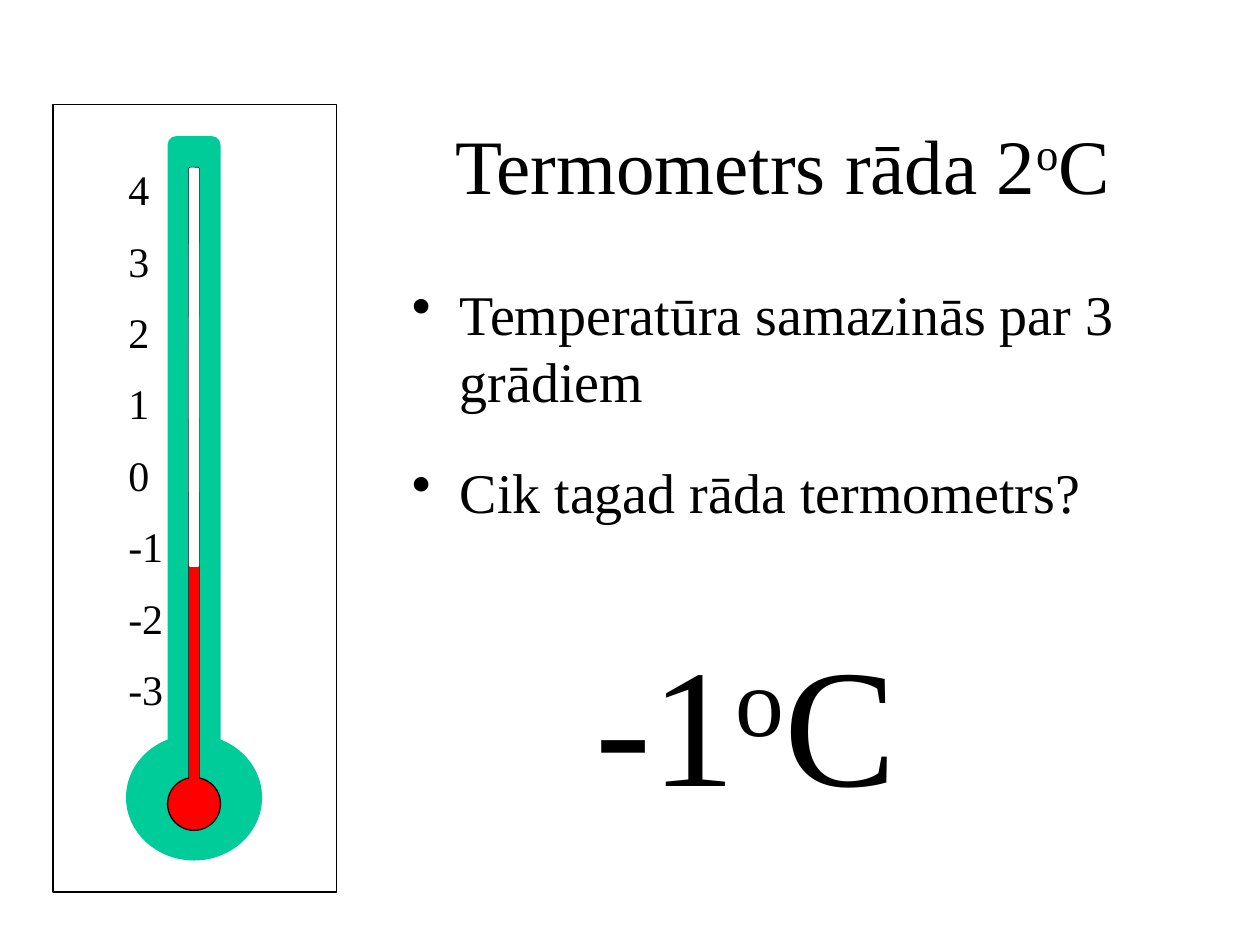
from dataclasses import dataclass

from lxml import etree
from pptx import Presentation
from pptx.dml.color import RGBColor
from pptx.enum.shapes import MSO_SHAPE as Preset
from pptx.enum.text import MSO_ANCHOR as Anchor, PP_ALIGN as Align
from pptx.oxml.ns import qn
from pptx.util import Inches, Pt


@dataclass(frozen=True)
class Theme:
    font: str = "Times New Roman"
    ink: RGBColor = RGBColor(0x00, 0x00, 0x00)
    paper: RGBColor = RGBColor(0xFF, 0xFF, 0xFF)
    casing: RGBColor = RGBColor(0x00, 0xCC, 0x99)
    mercury: RGBColor = RGBColor(0xFF, 0x00, 0x00)
    scale_size: int = 24
    body_size: int = 32
    title_size: int = 44
    answer_size: int = 96
    outline: float = 0.75


THEME = Theme()
TUBE_LEFT, TUBE_WIDTH = 1.5, 0.08
TEXT_LEFT, TEXT_WIDTH = 3.17, 6.08


def add_part(shapes, preset, box, fill, outlined=False):
    part = shapes.add_shape(preset, *map(Inches, box))
    part.shadow.inherit = False
    part.fill.solid()
    part.fill.fore_color.rgb = fill
    if outlined:
        part.line.color.rgb = THEME.ink
        part.line.width = Pt(THEME.outline)
    else:
        part.line.fill.background()
    return part


def add_tube(shapes, top, height, fill, outlined=False):
    box = (TUBE_LEFT, top, TUBE_WIDTH, height)
    add_part(shapes, Preset.ROUNDED_RECTANGLE, box, fill, outlined)


def add_text_area(shapes, box, anchor=Anchor.TOP):
    frame = shapes.add_textbox(*map(Inches, box)).text_frame
    frame.word_wrap = True
    frame.vertical_anchor = anchor
    return frame


def style(paragraph, size, align=Align.LEFT):
    paragraph.alignment = align
    paragraph.font.name = THEME.font
    paragraph.font.size = Pt(size)
    paragraph.font.color.rgb = THEME.ink


def write_degrees(frame, reading, size):
    paragraph = frame.paragraphs[0]
    style(paragraph, size, Align.CENTER)
    for wording in (reading, "o", "C"):
        run = paragraph.add_run()
        run.text = wording
        if wording == "o":
            run.font._element.set("baseline", "30000")


def add_scale(shapes, box, degrees):
    frame = add_text_area(shapes, box)
    for index, degree in enumerate(degrees):
        mark = frame.paragraphs[0] if index == 0 else frame.add_paragraph()
        mark.text = str(degree)
        style(mark, THEME.scale_size)
        mark.space_before = Pt(THEME.scale_size / 2 if index else 0)


def add_bullet(shapes, top, height, wording):
    frame = add_text_area(shapes, (TEXT_LEFT, top, TEXT_WIDTH, height))
    paragraph = frame.paragraphs[0]
    paragraph.text = wording
    style(paragraph, THEME.body_size)
    properties = paragraph._p.get_or_add_pPr()
    properties.set("marL", str(Inches(0.38)))
    properties.set("indent", str(Inches(-0.38)))
    bullet = etree.Element(qn("a:buChar"), char="•")
    properties.insert_element_before(bullet, "a:tabLst", "a:defRPr", "a:extLst")


def add_thermometer(slide):
    parts = slide.shapes.add_group_shape().shapes
    add_part(parts, Preset.RECTANGLE, (0.42, 0.83, 2.25, 6.25), THEME.paper, True)
    add_part(parts, Preset.ROUNDED_RECTANGLE, (1.33, 1.08, 0.42, 5.25), THEME.casing)
    add_part(parts, Preset.OVAL, (1, 5.83, 1.08, 1), THEME.casing)
    add_tube(parts, 1.33, 5, THEME.paper, True)
    add_part(parts, Preset.OVAL, (1.33, 6.17, 0.42, 0.42), THEME.mercury, True)
    add_scale(parts, (0.92, 1.25, 0.5, 4.69), range(4, -4, -1))


def add_answer(slide):
    answer = add_part(slide.shapes, Preset.RECTANGLE, (4.67, 4.67, 2.5, 2.08), THEME.paper)
    frame = answer.text_frame
    frame.word_wrap = False
    frame.vertical_anchor = Anchor.MIDDLE
    write_degrees(frame, "-1", THEME.answer_size)


def main():
    deck = Presentation()
    deck.slide_width, deck.slide_height = Inches(10), Inches(7.5)
    slide = deck.slides.add_slide(deck.slide_layouts[6])
    shapes = slide.shapes

    add_thermometer(slide)
    title = add_text_area(shapes, (TEXT_LEFT, 0.67, TEXT_WIDTH, 1.25), Anchor.MIDDLE)
    write_degrees(title, "Termometrs rāda 2", THEME.title_size)
    add_bullet(shapes, 2.17, 2.33, "Temperatūra samazinās par 3 grādiem")
    add_tube(shapes, 2.75, 3.5, THEME.mercury)
    add_tube(shapes, 1.33, 2, THEME.paper)
    add_bullet(shapes, 3.58, 1.75, "Cik tagad rāda termometrs?")
    for top in (1.92, 2.5):
        add_tube(shapes, top, 2, THEME.paper)
    add_answer(slide)

    deck.save("out.pptx")


if __name__ == "__main__":
    main()
